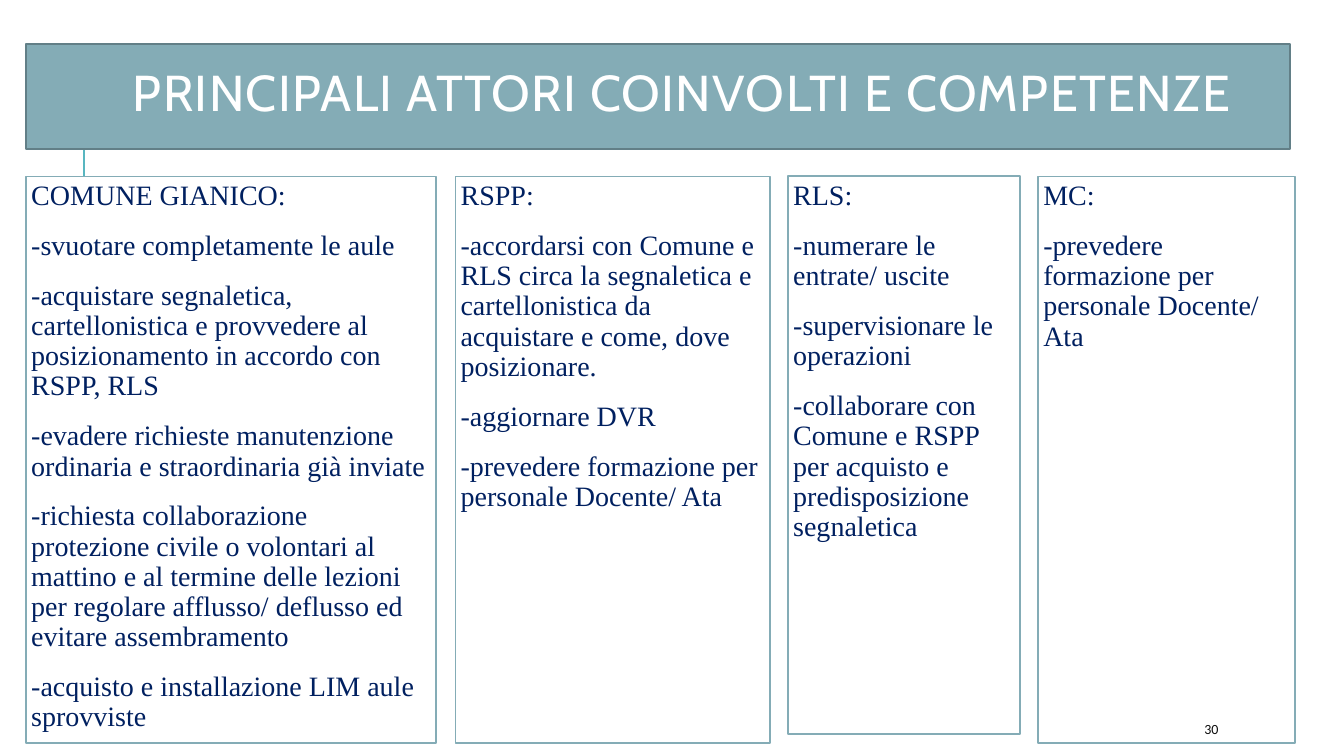
from pptx import Presentation, util as u
from pptx.dml.color import RGBColor
from pptx.enum import shapes, text
from pptx.oxml.ns import qn
from lxml import etree

COLORS = {
    "panel": "FFFFFF",
    "banner": "84ACB6",
    "banner_edge": "627F87",
    "accent": "58B6C0",
    "body": "002060",
    "title": "FFFFFF",
    "number": "0D0D0D",
}

TITLE = "PRINCIPALI ATTORI COINVOLTI E COMPETENZE"
ACTORS = [
    (18.7, 293, 404.6, [
        "COMUNE GIANICO:",
        "-svuotare completamente le aule",
        "-acquistare segnaletica, cartellonistica e provvedere al posizionamento in accordo con RSPP, RLS",
        "-evadere richieste manutenzione ordinaria e straordinaria già inviate",
        "-richiesta collaborazione protezione civile o volontari al mattino e al termine delle lezioni "
        "per regolare afflusso/ deflusso ed evitare assembramento",
        "-acquisto e installazione LIM aule sprovviste",
    ]),
    (325.4, 224.6, 404.6, [
        "RSPP:",
        "-accordarsi con Comune e RLS circa la segnaletica e cartellonistica da acquistare e come, dove posizionare.",
        "-aggiornare DVR",
        "-prevedere formazione per personale Docente/ Ata",
    ]),
    (563, 165.6, 398.2, [
        "RLS:",
        "-numerare le entrate/ uscite",
        "-supervisionare le operazioni",
        "-collaborare con Comune e RSPP per acquisto e predisposizione segnaletica",
    ]),
    (741.6, 183.6, 404.6, [
        "MC:",
        "-prevedere formazione per personale Docente/ Ata",
    ]),
]


class ActorsSlide:
    body_font = "Times New Roman"
    title_font = "Cabin"
    number_font = "Calibri"

    def __init__(self, deck):
        self.slide = deck.slides.add_slide(deck.slide_layouts[6])

    def color(self, name):
        return RGBColor.from_string(COLORS[name])

    def style(self, paragraph, font, size, color):
        for run in paragraph.runs:
            run.font.name = font
            run.font.size = u.Pt(size)
            run.font.color.rgb = self.color(color)

    def rectangle(self, left, top, width, height, fill, edge):
        box = self.slide.shapes.add_shape(
            shapes.MSO_SHAPE.RECTANGLE, u.Pt(left), u.Pt(top), u.Pt(width), u.Pt(height))
        box.shadow.inherit = False
        box.fill.solid()
        box.fill.fore_color.rgb = self.color(fill)
        box.line.color.rgb = self.color(edge)
        box.line.width = u.Pt(1.25)
        box.text_frame.word_wrap = True
        return box.text_frame

    def rule(self, x, top, bottom):
        stem = self.slide.shapes.add_connector(
            shapes.MSO_CONNECTOR.STRAIGHT, u.Pt(x), u.Pt(bottom), u.Pt(x), u.Pt(top))
        stem.line.color.rgb = self.color("accent")
        stem.line.width = u.Pt(1.5)
        etree.SubElement(stem._element.spPr, qn("a:effectLst"))

    def banner(self, title):
        frame = self.rectangle(18.7, 31.7, 902.9, 74.9, "banner", "banner_edge")
        frame.margin_left = u.Pt(42)
        frame.vertical_anchor = text.MSO_ANCHOR.MIDDLE
        frame.text = title
        heading = frame.paragraphs[0]
        heading.alignment = text.PP_ALIGN.CENTER
        heading.line_spacing = 0.8
        self.style(heading, self.title_font, 36, "title")
        heading.runs[0].font._element.set("spc", "100")

    def panel(self, left, width, height, duties):
        frame = self.rectangle(left, 126, width, height, "panel", "banner")
        frame.margin_left = frame.margin_right = u.Pt(3.6)
        frame.margin_top = frame.margin_bottom = u.Pt(3.6)
        frame.vertical_anchor = text.MSO_ANCHOR.TOP
        frame.text = "\n".join(duties)
        for index, duty in enumerate(frame.paragraphs):
            duty.alignment = text.PP_ALIGN.LEFT
            duty.line_spacing = 0.9
            duty.space_before = u.Pt(12 if index else 0)
            duty.space_after = u.Pt(2)
            self.style(duty, self.body_font, 20, "body")

    def page_number(self, number):
        box = self.slide.shapes.add_textbox(u.Pt(853.2), u.Pt(509.8), u.Pt(76.3), u.Pt(21.6))
        frame = box.text_frame
        frame.word_wrap = True
        frame.vertical_anchor = text.MSO_ANCHOR.MIDDLE
        frame.text = number
        self.style(frame.paragraphs[0], self.number_font, 10, "number")


def main():
    deck = Presentation()
    deck.slide_width, deck.slide_height = u.Pt(960), u.Pt(540)
    actors = ActorsSlide(deck)
    actors.rule(59.8, 64.8, 136.8)
    actors.banner(TITLE)
    for left, width, height, duties in ACTORS:
        actors.panel(left, width, height, duties)
    actors.page_number("30")
    deck.save("out.pptx")


if __name__ == "__main__":
    main()
